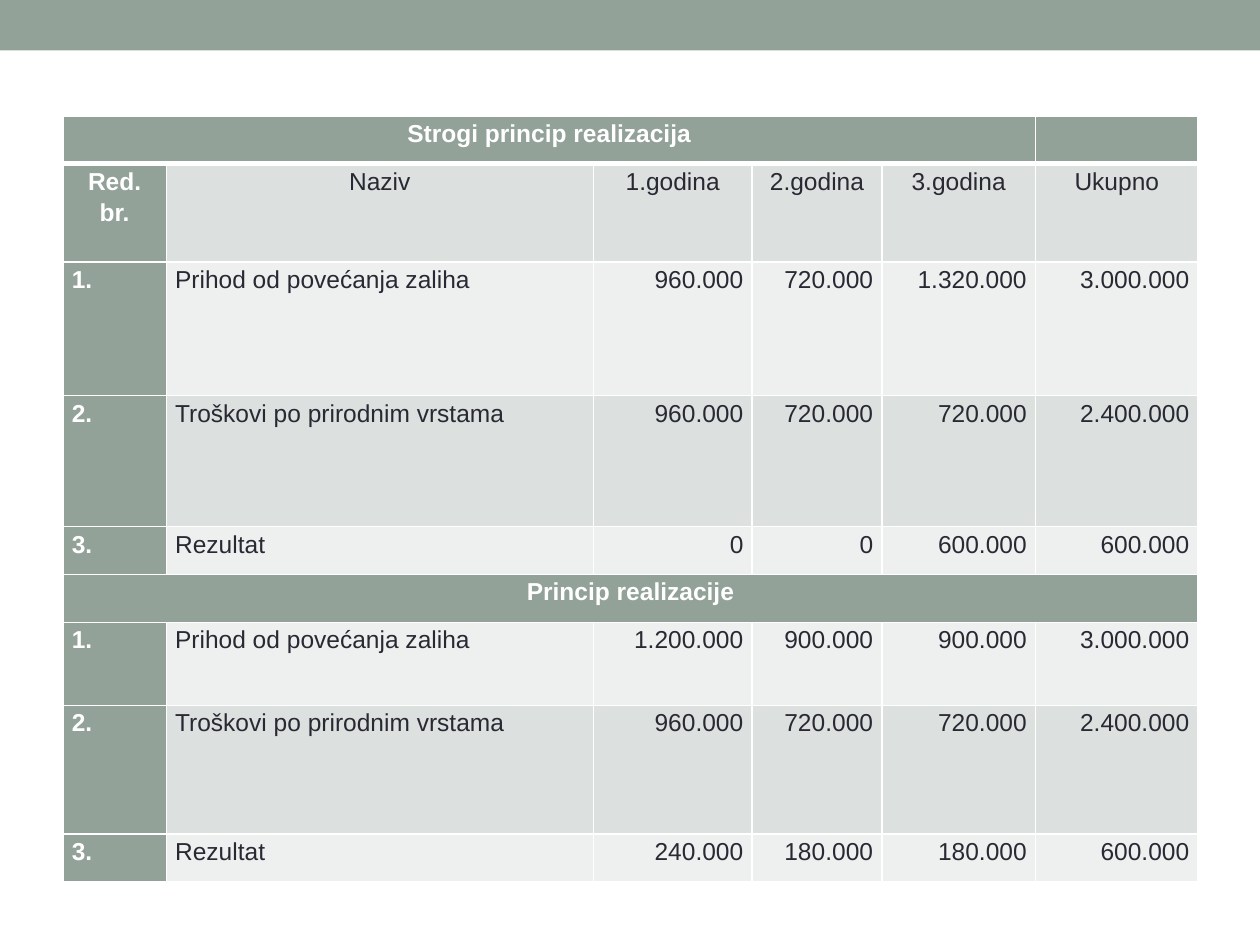
from lxml.etree import SubElement
from pptx import Presentation
from pptx.dml.color import RGBColor
from pptx.enum.shapes import MSO_SHAPE as Shape
from pptx.enum.text import PP_ALIGN as Align
from pptx.oxml.ns import qn
from pptx.util import Inches, Pt

SAGE = RGBColor(0x93, 0xA2, 0x99)
BAND_DARK = RGBColor(0xDC, 0xE0, 0xDE)
BAND_LIGHT = RGBColor(0xEE, 0xF0, 0xEF)
INK = RGBColor(0x29, 0x29, 0x34)
WHITE = RGBColor(0xFF, 0xFF, 0xFF)

COLUMN_WIDTHS = [0.82, 3.39, 1.26, 1.03, 1.22, 1.29]
ROW_HEIGHTS = [0.38, 0.78, 1.06, 1.04, 0.38, 0.38, 0.66, 1.02, 0.38]
COLUMN_ROW = 1
SECTION_SPANS = {0: 5, 5: 6}
ROWS = [
    ["Strogi princip realizacija"],
    ["Red.\nbr.", "Naziv", "1.godina", "2.godina", "3.godina", "Ukupno"],
    ["1.", "Prihod od povećanja zaliha", "960.000", "720.000", "1.320.000", "3.000.000"],
    ["2.", "Troškovi po prirodnim vrstama", "960.000", "720.000", "720.000", "2.400.000"],
    ["3.", "Rezultat", "0", "0", "600.000", "600.000"],
    ["Princip realizacije"],
    ["1.", "Prihod od povećanja zaliha", "1.200.000", "900.000", "900.000", "3.000.000"],
    ["2.", "Troškovi po prirodnim vrstama", "960.000", "720.000", "720.000", "2.400.000"],
    ["3.", "Rezultat", "240.000", "180.000", "180.000", "600.000"],
]


def add_top_band(slide, left, top, width, height):
    """Draw the plain colour band across the given box."""
    band = slide.shapes.add_shape(Shape.RECTANGLE, left, top, width, height)
    band.shadow.inherit = False
    band.fill.solid()
    band.fill.fore_color.rgb = SAGE
    band.line.fill.background()


def set_borders(cell, widths):
    """Give the cell white borders, with widths in points keyed by side."""
    properties = cell._tc.get_or_add_tcPr()
    for side, width in widths.items():
        line = SubElement(properties, qn(f"a:ln{side}"), w=str(Pt(width)))
        fill = SubElement(line, qn("a:solidFill"))
        SubElement(fill, qn("a:srgbClr"), val=str(WHITE))


def style_cell(cell, text, fill, color, bold, alignment, bottom_border):
    """Write the text and format the cell."""
    set_borders(cell, {"L": 1, "R": 1, "T": 1, "B": bottom_border})
    cell.fill.solid()
    cell.fill.fore_color.rgb = fill
    cell.margin_left = cell.margin_right = Inches(0.07)
    cell.margin_top = cell.margin_bottom = 0
    cell.text_frame.text = text
    for paragraph in cell.text_frame.paragraphs:
        paragraph.alignment = alignment
        paragraph.line_spacing = 1.15
        paragraph.font.name = "Arial"
        paragraph.font.size = Pt(14)
        paragraph.font.bold = bold
        paragraph.font.color.rgb = color


def add_results_table(slide, left, top, width, height):
    """Place the table comparing the two realisation principles."""
    table = slide.shapes.add_table(
        len(ROWS), len(COLUMN_WIDTHS), left, top, width, height
    ).table
    for column, column_width in zip(table.columns, COLUMN_WIDTHS):
        column.width = Inches(column_width)
    for row, row_height in zip(table.rows, ROW_HEIGHTS):
        row.height = Inches(row_height)

    for row_index, texts in enumerate(ROWS):
        is_section = row_index in SECTION_SPANS
        band = BAND_DARK if row_index % 2 else BAND_LIGHT
        for column_index in range(len(COLUMN_WIDTHS)):
            is_heading = is_section or column_index == 0
            if is_section or row_index == COLUMN_ROW:
                alignment = Align.CENTER
            else:
                alignment = Align.LEFT if column_index < 2 else Align.RIGHT
            style_cell(
                table.cell(row_index, column_index),
                texts[column_index] if column_index < len(texts) else "",
                fill=SAGE if is_heading else band,
                color=WHITE if is_heading else INK,
                bold=is_heading,
                alignment=alignment,
                bottom_border=3 if row_index == 0 else 1,
            )

    for row_index, span in SECTION_SPANS.items():
        table.cell(row_index, 0).merge(table.cell(row_index, span - 1))


def main():
    """Build and save the presentation."""
    presentation = Presentation()
    presentation.slide_width = Inches(10)
    presentation.slide_height = Inches(7.5)
    slide = presentation.slides.add_slide(presentation.slide_layouts[6])
    add_top_band(slide, 0, 0, presentation.slide_width, Inches(0.4))
    add_results_table(slide, Inches(0.5), Inches(0.92), Inches(9), Inches(6.08))
    presentation.save("out.pptx")


if __name__ == "__main__":
    main()
